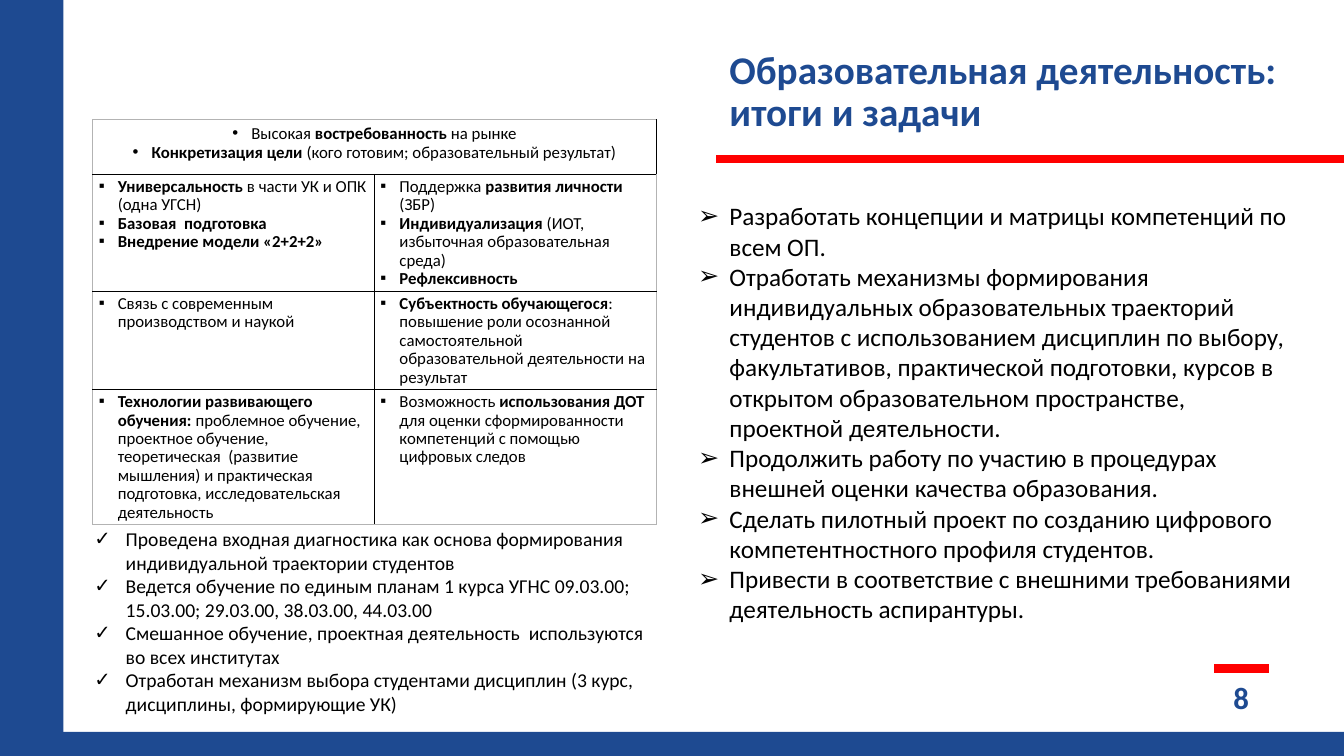
import pptx
import pptx.util
import pptx.dml.color
import pptx.enum.shapes
import pptx.enum.text
import pptx.oxml
import pptx.oxml.ns
from pptx.util import Cm

BLUE, RED, BLACK, GREY = "1E4A91", "FF0000", "000000", "B3B3B3"
Align = pptx.enum.text.PP_ALIGN
Anchor = pptx.enum.text.MSO_ANCHOR
NAMESPACE = pptx.oxml.ns.nsdecls("a")


def color(hex_value):
    return pptx.dml.color.RGBColor.from_string(hex_value)


def write(frame, lines, size=12, ink=BLACK, bold=False, bullet=None, indent=0,
          align=Align.LEFT, spacing=1.0, anchor=Anchor.TOP):
    frame.word_wrap = True
    frame.vertical_anchor = anchor
    for index, line in enumerate(lines):
        paragraph = frame.add_paragraph() if index else frame.paragraphs[0]
        if bullet:
            props = paragraph._p.get_or_add_pPr()
            props.set("marL", str(Cm(indent)))
            props.set("indent", str(-Cm(indent)))
            for tag in ('buFont {} typeface="Arial"', f'buChar {{}} char="{bullet}"'):
                props.append(pptx.oxml.parse_xml(f"<a:{tag.format(NAMESPACE)}/>"))
        paragraph.alignment = align
        paragraph.line_spacing = spacing
        for part, text in enumerate(line.split("*")):
            if text:
                run = paragraph.add_run()
                run.text = text
                run.font.name = "Calibri"
                run.font.size = pptx.util.Pt(size)
                run.font.bold = bold or part % 2 == 1
                run.font.color.rgb = color(ink)


deck = pptx.Presentation()
deck.slide_width, deck.slide_height = Cm(33.88), Cm(19.05)
slide = deck.slides.add_slide(deck.slide_layouts[6])
shapes = slide.shapes

for left, right, y in ((18.06, 33.88, 4), (30.61, 32, 16.84)):
    rule = shapes.add_connector(pptx.enum.shapes.MSO_CONNECTOR.STRAIGHT,
                                Cm(left), Cm(y), Cm(right), Cm(y))
    rule.line.color.rgb = color(RED)
    rule.line.width = pptx.util.Pt(6)
    rule._element.spPr.append(pptx.oxml.parse_xml(f"<a:effectLst {NAMESPACE}/>"))

for left, top, width, height in ((0, 18.44, 33.88, 0.61), (0, 0, 1.6, 19.05)):
    band = shapes.add_shape(pptx.enum.shapes.MSO_SHAPE.RECTANGLE,
                            Cm(left), Cm(top), Cm(width), Cm(height))
    band.shadow.inherit = False
    band.fill.solid()
    band.fill.fore_color.rgb = color(BLUE)
    band.line.fill.background()

page_number = shapes.add_textbox(Cm(30.4), Cm(17.07), Cm(1.78), Cm(1))
write(page_number.text_frame, ["8"], size=22, ink=BLUE, bold=True,
      align=Align.CENTER, anchor=Anchor.MIDDLE)

title = shapes.add_textbox(Cm(18.14), Cm(0), Cm(15.39), Cm(3.53))
write(title.text_frame, ["Образовательная деятельность: итоги и задачи"], size=28,
      ink=BLUE, bold=True, spacing=0.9, anchor=Anchor.BOTTOM)

principles = [
    [["Высокая *востребованность *на рынке",
      "*Конкретизация цели* (кого готовим; образовательный результат)"], []],
    [["*Универсальность* в части УК и ОПК (одна УГСН)",
      "*Базовая  подготовка*",
      "*Внедрение модели «2+2+2»*"],
     ["Поддержка *развития личности *(ЗБР)",
      "*Индивидуализация *(ИОТ, избыточная образовательная среда)",
      "*Рефлексивность*"]],
    [["Связь с современным производством и наукой"],
     ["*Субъектность обучающегося*: повышение роли осознанной самостоятельной "
      "образовательной деятельности на результат"]],
    [["*Технологии развивающего обучения: *проблемное обучение, проектное обучение, "
      "теоретическая  (развитие мышления) и практическая подготовка, "
      "исследовательская деятельность"],
     ["Возможность *использования ДОТ *для оценки сформированности компетенций "
      "с помощью цифровых следов"]],
]
row_heights = [1.38, 2.95, 2.47, 3.4]
last_row = len(principles) - 1
table = shapes.add_table(len(principles), 2, Cm(2.34), Cm(3.02),
                         Cm(14.2), Cm(sum(row_heights))).table
table.first_row = table.horz_banding = False
for column in table.columns:
    column.width = Cm(7.1)
table.cell(0, 0).merge(table.cell(0, 1))

for r, row in enumerate(principles):
    table.rows[r].height = Cm(row_heights[r])
    for c, lines in enumerate(row):
        cell = table.cell(r, c)
        outer = {"lnL": c == 0, "lnR": c == 1, "lnT": r == 0, "lnB": r == last_row}
        for side, is_outer in outer.items():
            cell._tc.get_or_add_tcPr().append(pptx.oxml.parse_xml(
                f'<a:{side} {NAMESPACE} w="{pptx.util.Pt(1)}"><a:solidFill>'
                f'<a:srgbClr val="{GREY if is_outer else BLACK}"/></a:solidFill></a:{side}>'))
        cell.fill.solid()
        cell.fill.fore_color.rgb = color("FFFFFF")
        cell.margin_left = cell.margin_right = Cm(0.15 if r else 0.28)
        cell.margin_top = cell.margin_bottom = Cm(0.08 if r else 0.13)
        write(cell.text_frame, lines, bullet="▪" if r else "•", indent=0.48,
              align=Align.LEFT if r else Align.CENTER, spacing=0.9)

results = shapes.add_textbox(Cm(2.13), Cm(13.16), Cm(14.38), Cm(5.05))
write(results.text_frame, [
    "Проведена входная диагностика как основа формирования индивидуальной "
    "траектории студентов",
    "Ведется обучение по единым планам 1 курса УГНС 09.03.00; 15.03.00; 29.03.00, "
    "38.03.00, 44.03.00",
    "Смешанное обучение, проектная деятельность  используются во всех институтах",
    "Отработан механизм выбора студентами дисциплин (3 курс, дисциплины, "
    "формирующие УК)",
], size=14, bullet="✓", indent=0.79)

tasks = shapes.add_textbox(Cm(17.35), Cm(4.93), Cm(15.6), Cm(11.02))
write(tasks.text_frame, [
    "Разработать концепции и матрицы компетенций по всем ОП.",
    "Отработать механизмы формирования индивидуальных образовательных траекторий "
    "студентов с использованием дисциплин по выбору, факультативов, практической "
    "подготовки, курсов в открытом образовательном пространстве, проектной деятельности.",
    "Продолжить работу по участию в процедурах внешней оценки качества образования.",
    "Сделать пилотный проект по созданию цифрового компетентностного профиля студентов.",
    "Привести в соответствие с внешними требованиями деятельность аспирантуры.",
], size=18, bullet="➢", indent=0.79)

deck.save("out.pptx")
